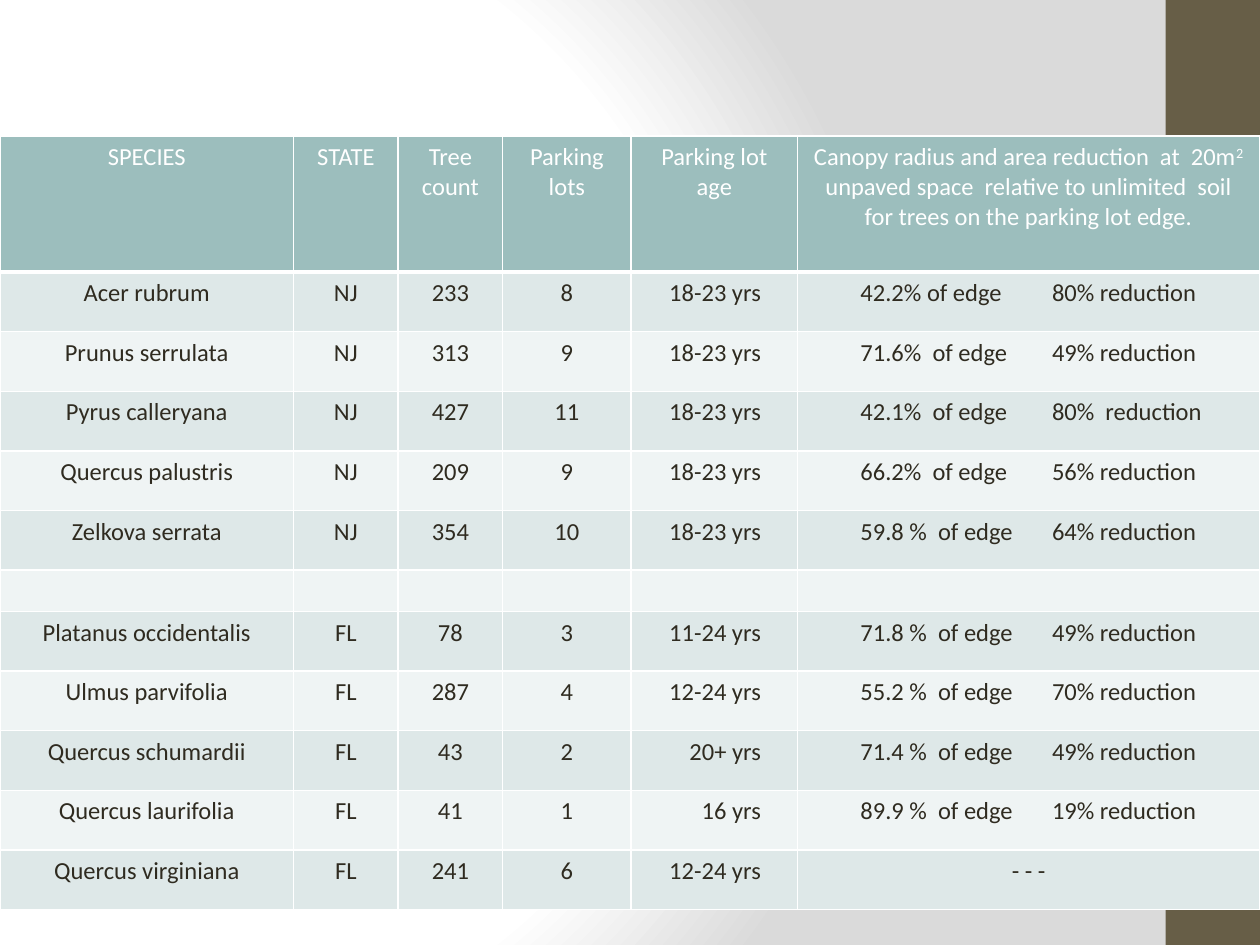
from lxml import etree
from pptx import Presentation
from pptx.dml.color import RGBColor
from pptx.enum.shapes import MSO_SHAPE
from pptx.enum.text import PP_ALIGN
from pptx.oxml import parse_xml
from pptx.oxml.ns import qn
from pptx.util import Inches, Pt

RECT = MSO_SHAPE.RECTANGLE
CENTER, LEFT, RIGHT = PP_ALIGN.CENTER, PP_ALIGN.LEFT, PP_ALIGN.RIGHT
BROWN = RGBColor(0x67, 0x5E, 0x47)
WHITE = RGBColor(0xFF, 0xFF, 0xFF)
INK = RGBColor(0x2F, 0x2B, 0x20)
TEAL = RGBColor(0x9C, 0xBE, 0xBD)
BANDS = RGBColor(0xEF, 0xF4, 0xF4), RGBColor(0xDE, 0xE8, 0xE8)
NS = 'xmlns:a="http://schemas.openxmlformats.org/drawingml/2006/main"'

COLS = [2.33, 0.83, 0.83, 1.02, 1.32, 3.67]
HEAD_H, GAP_H, TABLE_H = 1.08, 0.33, 6.14
AGE, SPACE = 4, 5
HEADS = ["SPECIES", "STATE", "Tree count", "Parking lots", "Parking lot age"]
SPACE_HEAD = [
    "Canopy radius and area reduction  at  20m", "2",
    " unpaved space  relative to unlimited  soil for trees on the parking lot edge.",
]
GAP = [""] * len(COLS)
ROWS = [
    ["Acer rubrum", "NJ", "233", "8", "18-23 yrs", "42.2% of edge\t80% reduction"],
    ["Prunus serrulata", "NJ", "313", "9", "18-23 yrs", "71.6%  of edge\t49% reduction"],
    ["Pyrus calleryana", "NJ", "427", "11", "18-23 yrs", "42.1%  of edge\t80%  reduction"],
    ["Quercus palustris", "NJ", "209", "9", "18-23 yrs", "66.2%  of edge\t56% reduction"],
    ["Zelkova serrata", "NJ", "354", "10", "18-23 yrs", "59.8 %  of edge\t64% reduction"],
    GAP,
    ["Platanus occidentalis", "FL", "78", "3", "11-24 yrs", "71.8 %  of edge\t49% reduction"],
    ["Ulmus parvifolia", "FL", "287", "4", "12-24 yrs", "55.2 %  of edge\t70% reduction"],
    ["Quercus schumardii", "FL", "43", "2", "20+ yrs", "71.4 %  of edge\t49% reduction"],
    ["Quercus laurifolia", "FL", "41", "1", "16 yrs", "89.9 %  of edge\t19% reduction"],
    ["Quercus virginiana", "FL", "241", "6", "12-24 yrs", "- - -"],
]


def set_back(slide):
    """Fill the background with a round gradient, white to grey."""
    slide.background.fill.solid()
    solid = slide.element.find(".//" + qn("p:bgPr")).find(qn("a:solidFill"))
    stops = "".join(
        f'<a:gs pos="{pos}"><a:srgbClr val="{tone}"/></a:gs>'
        for pos, tone in [(0, "FFFFFF"), (75000, "FFFFFF"), (100000, "DADADA")])
    solid.getparent().replace(solid, parse_xml(
        f'<a:gradFill {NS} rotWithShape="1"><a:gsLst>{stops}</a:gsLst>'
        '<a:path path="circle"><a:fillToRect l="20000" t="50000" r="100000" b="50000"/>'
        '</a:path></a:gradFill>'))


def add_strip(slide):
    strip = slide.shapes.add_shape(RECT, Inches(9.25), 0, Inches(0.75), Inches(7.5))
    strip.shadow.inherit = False
    strip.fill.solid()
    strip.fill.fore_color.rgb = BROWN
    strip.line.fill.background()


def set_cell(cell, fill, base=1):
    """Draw white borders, the lower one base points wide, and fill the cell."""
    props = cell._tc.get_or_add_tcPr()
    for side, width in zip("LRTB", (1, 1, 1, base)):
        props.append(parse_xml(
            f'<a:ln{side} {NS} w="{Pt(width)}"><a:solidFill>'
            f'<a:srgbClr val="{WHITE}"/></a:solidFill></a:ln{side}>'))
    cell.fill.solid()
    cell.fill.fore_color.rgb = fill


def set_text(cell, parts, color, align=CENTER):
    """Write the parts as runs; every second one is raised."""
    para = cell.text_frame.paragraphs[0]
    para.alignment = align
    font = para.font
    font.name, font.size, font.bold = "Calibri", Pt(14), False
    font.color.rgb = color
    for i, part in enumerate(parts):
        run = para.add_run()
        run.text = part
        if i % 2:
            run._r.get_or_add_rPr().set("baseline", "30000")


def add_tab(cell, pos):
    props = cell.text_frame.paragraphs[0]._p.get_or_add_pPr()
    tabs = etree.Element(qn("a:tabLst"))
    etree.SubElement(tabs, qn("a:tab"), pos=str(pos), algn="l")
    props.insert(0, tabs)


def fill_row(cells, texts, band):
    for col, (cell, text) in enumerate(zip(cells, texts)):
        set_cell(cell, band)
        if not text:
            cell.margin_top = cell.margin_bottom = 0
        elif col == AGE:
            cell.margin_right = Inches(0.29)
            set_text(cell, [text], INK, RIGHT)
        elif "\t" in text:
            cell.margin_left = Inches(0.5)
            set_text(cell, [text], INK, LEFT)
            add_tab(cell, Inches(1.52))
        else:
            set_text(cell, [text], INK)


def add_trees(slide):
    table = slide.shapes.add_table(
        len(ROWS) + 1, len(COLS), 0, Inches(1.08), Inches(10), Inches(TABLE_H)).table
    table.first_row = table.horz_banding = False
    for col, width in zip(table.columns, COLS):
        col.width = Inches(width)
    row_h = (TABLE_H - HEAD_H - GAP_H) / (len(ROWS) - 1)
    heights = [HEAD_H] + [GAP_H if row is GAP else row_h for row in ROWS]
    for row, height in zip(table.rows, heights):
        row.height = Inches(height)
    heads = [[head] for head in HEADS] + [SPACE_HEAD]
    for cell, parts in zip(table.rows[0].cells, heads):
        set_cell(cell, TEAL, 3)
        set_text(cell, parts, WHITE)
    for i, texts in enumerate(ROWS, 1):
        fill_row(table.rows[i].cells, texts, BANDS[i % 2])


def main():
    deck = Presentation()
    deck.slide_width, deck.slide_height = Inches(10), Inches(7.5)
    slide = deck.slides.add_slide(deck.slide_layouts[6])
    set_back(slide)
    add_strip(slide)
    add_trees(slide)
    deck.save("out.pptx")


if __name__ == "__main__":
    main()
